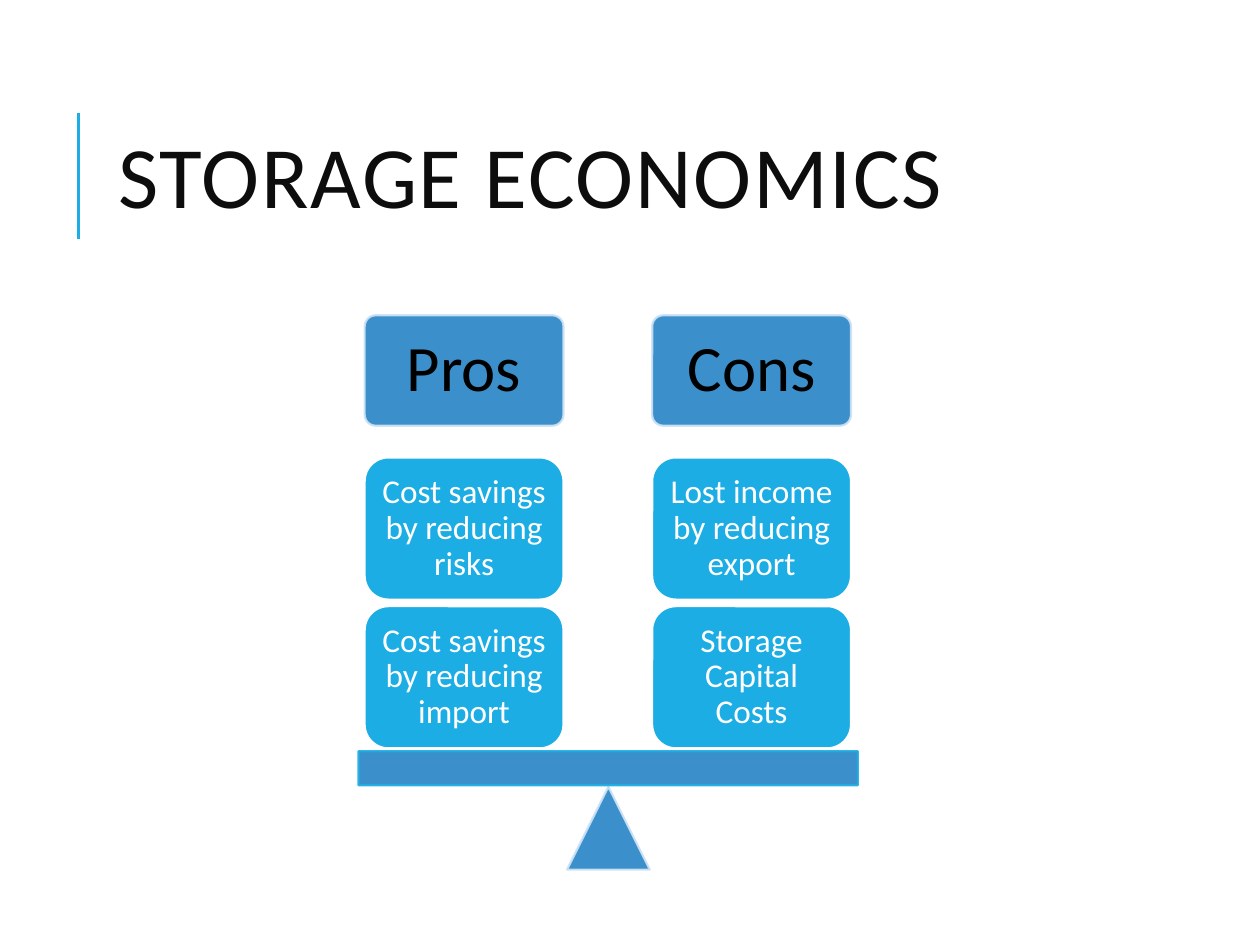
from lxml import etree
from pptx import Presentation
from pptx.dml.color import RGBColor
from pptx.enum.shapes import MSO_CONNECTOR, MSO_SHAPE
from pptx.enum.text import MSO_ANCHOR, PP_ALIGN
from pptx.oxml.ns import qn
from pptx.util import Pt

ROUNDED = MSO_SHAPE.ROUNDED_RECTANGLE
TRIANGLE = MSO_SHAPE.ISOSCELES_TRIANGLE
BAR = MSO_SHAPE.RECTANGLE
MIDDLE = MSO_ANCHOR.MIDDLE
CENTER = PP_ALIGN.CENTER

CYAN = RGBColor(0x1C, 0xAD, 0xE4)
BLUE = RGBColor(0x26, 0x83, 0xC6)
PALE = RGBColor(0xCD, 0xE3, 0xF5)
INK = RGBColor(0x0D, 0x0D, 0x0D)
BLACK = RGBColor(0, 0, 0)
WHITE = RGBColor(0xFF, 0xFF, 0xFF)
FONT = "Calibri"

COLUMNS = [
    (208.4, "Pros", ["Cost savings by reducing risks", "Cost savings by reducing import"]),
    (372.7, "Cons", ["Lost income by reducing export", "Storage Capital Costs"]),
]
BLOCK_W, HEADER_H, CARD_H = 113.6, 63.1, 81.2
HEADER_TOP, CARD_TOP, CARD_STEP = 180.2, 261.4, 85

prs = Presentation()
prs.slide_width, prs.slide_height = Pt(720), Pt(540)
s = prs.slides.add_slide(prs.slide_layouts[6])


def add_block(kind, x, y, w, h, fill, line, opacity=100):
    """Add a filled, outlined shape; opacity is in percent."""
    sp = s.shapes.add_shape(kind, Pt(x), Pt(y), Pt(w), Pt(h))
    sp.shadow.inherit = False
    sp.fill.solid()
    sp.fill.fore_color.rgb = fill
    sp.line.color.rgb = line
    sp.line.width = Pt(1.25)
    if opacity < 100:
        for color in sp._element.spPr.iter(qn("a:srgbClr")):
            etree.SubElement(color, qn("a:alpha"), val=str(opacity * 1000))
    return sp


def set_text(sp, text, size, color, spacing, inset):
    tf = sp.text_frame
    tf.word_wrap = True
    tf.vertical_anchor = MIDDLE
    tf.margin_left = tf.margin_right = Pt(inset)
    tf.margin_top = tf.margin_bottom = Pt(inset)
    p = tf.paragraphs[0]
    p.line_spacing = spacing
    r = p.add_run()
    r.text = text
    r.font.name = FONT
    r.font.size = Pt(size)
    r.font.color.rgb = color
    return p


# Title with its accent line
accent = s.shapes.add_connector(MSO_CONNECTOR.STRAIGHT, Pt(45), Pt(136.8), Pt(45), Pt(64.8))
accent.line.color.rgb = CYAN
accent.line.width = Pt(1.5)
etree.SubElement(accent._element.spPr, qn("a:effectLst"))

title = s.shapes.add_textbox(Pt(60.5), Pt(46), Pt(574), Pt(118))
p = set_text(title, "STORAGE ECONOMICS", 50, INK, 0.8, 7.2)
p.runs[0].font._element.set("spc", "100")

# Balance: pivot and beam
add_block(TRIANGLE, 324, 449.6, 47.3, 47.3, BLUE, PALE, 90)
add_block(BAR, 204.9, 429.3, 285.3, 19.5, BLUE, CYAN, 90)

# Headers and the stacked cards
for x, heading, cards in COLUMNS:
    header = add_block(ROUNDED, x, HEADER_TOP, BLOCK_W, HEADER_H, BLUE, PALE, 90)
    header.adjustments[0] = 0.1
    set_text(header, heading, 37, BLACK, 0.9, 10.8).alignment = CENTER
    for i, text in enumerate(cards):
        card = add_block(ROUNDED, x, CARD_TOP + i * CARD_STEP, BLOCK_W, CARD_H, CYAN, WHITE)
        set_text(card, text, 19, WHITE, 0.9, 5.7).alignment = CENTER

prs.save("out.pptx")
